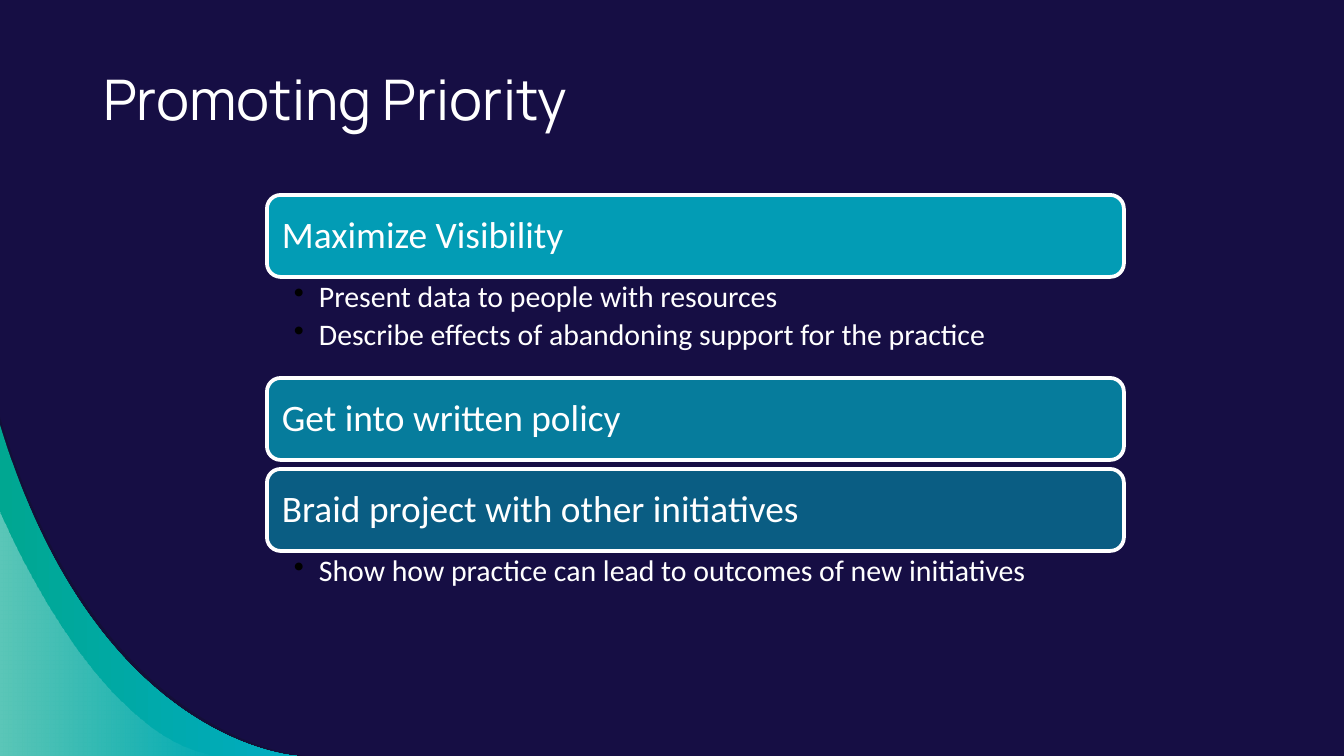
"""Build the Promoting Priority slide with its three banners and bullet lists."""
from dataclasses import dataclass

from lxml import etree
from pptx import Presentation
from pptx.dml.color import RGBColor
from pptx.enum.shapes import MSO_SHAPE
from pptx.enum.text import MSO_ANCHOR, MSO_AUTO_SIZE, PP_ALIGN
from pptx.oxml.ns import qn
from pptx.util import Emu, Pt

ROUNDED = MSO_SHAPE.ROUNDED_RECTANGLE
TOP, MIDDLE = MSO_ANCHOR.TOP, MSO_ANCHOR.MIDDLE
LEFT = PP_ALIGN.LEFT
NO_AUTOFIT = MSO_AUTO_SIZE.NONE
SCALE = 914400 / 134.4
PAGE_WIDTH, PAGE_HEIGHT = 1344, 756
BANNER_LEFT, BANNER_WIDTH, BANNER_HEIGHT = 267, 857, 82
BULLET_INDENT = 25
COLORS = {
    "navy": "160E44",
    "shade": "12102F",
    "cyan": "00ACC2",
    "green": "00A791",
    "white": "FFFFFF",
    "black": "000000",
}


@dataclass
class Banner:
    text: str
    top: int
    opacity: int


@dataclass
class BulletList:
    placeholder: int
    top: int
    height: int
    items: tuple[str, ...]


@dataclass
class Wave:
    curve: tuple[tuple[int, int], ...]
    colors: tuple[str, ...]
    opacities: tuple[int, ...]


BANNERS = (
    Banner("Maximize Visibility", 195, 90),
    Banner("Get into written policy", 378, 70),
    Banner("Braid project with other initiatives", 469, 50),
)
LISTS = (
    BulletList(1, 278, 101, (
        "Present data to people with resources",
        "Describe effects of abandoning support for the practice",
    )),
    BulletList(2, 552, 149, (
        "Show how practice can lead to outcomes of new initiatives",
    )),
)
WAVES = (
    Wave(((0, 417), (98, 745), (305, 756), (305, 756)), ("shade",), (54,)),
    Wave(((0, 425), (97, 746), (297, 756), (297, 756)), ("green", "cyan"), (100, 100)),
    Wave(((0, 511), (0, 511), (93, 741), (218, 756)), ("white", "white"), (36, 0)),
)


def px(length: int) -> Emu:
    return Emu(round(length * SCALE))


def rgb(name: str) -> RGBColor:
    return RGBColor.from_string(COLORS[name])


def place(box, left: int, top: int, width: int, height: int) -> None:
    box.left, box.top, box.width, box.height = map(px, (left, top, width, height))


def set_frame(box, anchor, insets: tuple[int, int, int, int]):
    frame = box.text_frame
    frame.word_wrap = True
    frame.auto_size = NO_AUTOFIT
    frame.vertical_anchor = anchor
    (frame.margin_left, frame.margin_top,
     frame.margin_right, frame.margin_bottom) = map(px, insets)
    return frame


def add_text(para, text: str, size: int, font: str = "Calibri") -> None:
    para.alignment = LEFT
    span = para.add_run()
    span.text = text
    span.font.name = font
    span.font.size = Pt(size)
    span.font.color.rgb = rgb("white")


def set_opacity(shape, opacities: tuple[int, ...]) -> None:
    for color, opacity in zip(shape.fill._xPr.iter(qn("a:srgbClr")), opacities):
        etree.SubElement(color, qn("a:alpha"), val=str(opacity * 1000))


def bend_outline(shape) -> None:
    outline = next(shape._element.iter(qn("a:path")))
    curve = etree.Element(qn("a:cubicBezTo"))
    for line in outline.findall(qn("a:lnTo"))[:3]:
        curve.append(line[0])
        outline.remove(line)
    outline.insert(1, curve)


def draw_wave(page, wave: Wave) -> None:
    start, *controls = [(px(x), px(y)) for x, y in wave.curve]
    builder = page.shapes.build_freeform(*start, scale=1.0)
    builder.add_line_segments(controls + [(px(0), px(PAGE_HEIGHT))], close=True)
    shape = builder.convert_to_shape()
    bend_outline(shape)
    shape.shadow.inherit = False
    if len(wave.colors) == 1:
        shape.fill.solid()
        shape.fill.fore_color.rgb = rgb(wave.colors[0])
    else:
        shape.fill.gradient()
        shape.fill.gradient_angle = 0
        for stop, name in zip(shape.fill.gradient_stops, wave.colors):
            stop.color.rgb = rgb(name)
    set_opacity(shape, wave.opacities)
    shape.line.fill.background()


def draw_banner(page, banner: Banner) -> None:
    box = page.shapes.add_shape(
        ROUNDED, *map(px, (BANNER_LEFT, banner.top, BANNER_WIDTH, BANNER_HEIGHT)))
    box.shadow.inherit = False
    box.fill.solid()
    box.fill.fore_color.rgb = rgb("cyan")
    set_opacity(box, (banner.opacity,))
    box.line.color.rgb = rgb("white")
    box.line.width = Pt(2)
    para = set_frame(box, MIDDLE, (11, 11, 11, 11)).paragraphs[0]
    para.line_spacing = 0.9
    add_text(para, banner.text, 20)


def add_bullet(para) -> None:
    properties = para._p.get_or_add_pPr()
    properties.set("marL", str(px(BULLET_INDENT)))
    properties.set("indent", str(-px(BULLET_INDENT)))
    color = etree.SubElement(properties, qn("a:buClr"))
    etree.SubElement(color, qn("a:srgbClr"), val=COLORS["black"])
    etree.SubElement(properties, qn("a:buFontTx"))
    etree.SubElement(properties, qn("a:buChar"), char="•")


def fill_list(page, bullets: BulletList) -> None:
    box = page.placeholders[bullets.placeholder]
    place(box, BANNER_LEFT, bullets.top, BANNER_WIDTH, bullets.height)
    frame = set_frame(box, TOP, (27, 4, 22, 4))
    for index, item in enumerate(bullets.items):
        para = frame.add_paragraph() if index else frame.paragraphs[0]
        add_bullet(para)
        para.line_spacing = 0.9
        para.space_before = Pt(0)
        para.space_after = Pt(3)
        add_text(para, item, 16)


def main() -> None:
    deck = Presentation()
    deck.slide_width, deck.slide_height = px(PAGE_WIDTH), px(PAGE_HEIGHT)
    page = deck.slides.add_slide(deck.slide_layouts.get_by_name("Two Content"))
    page.background.fill.solid()
    page.background.fill.fore_color.rgb = rgb("navy")
    for wave in WAVES:
        draw_wave(page, wave)
    title = page.shapes.title
    place(title, 90, 51, 1034, 93)
    frame = set_frame(title, TOP, (13, 13, 13, 13))
    add_text(frame.paragraphs[0], "Promoting Priority", 30, "Manrope")
    for banner in BANNERS:
        draw_banner(page, banner)
    for bullets in LISTS:
        fill_list(page, bullets)
    deck.save("out.pptx")


if __name__ == "__main__":
    main()
